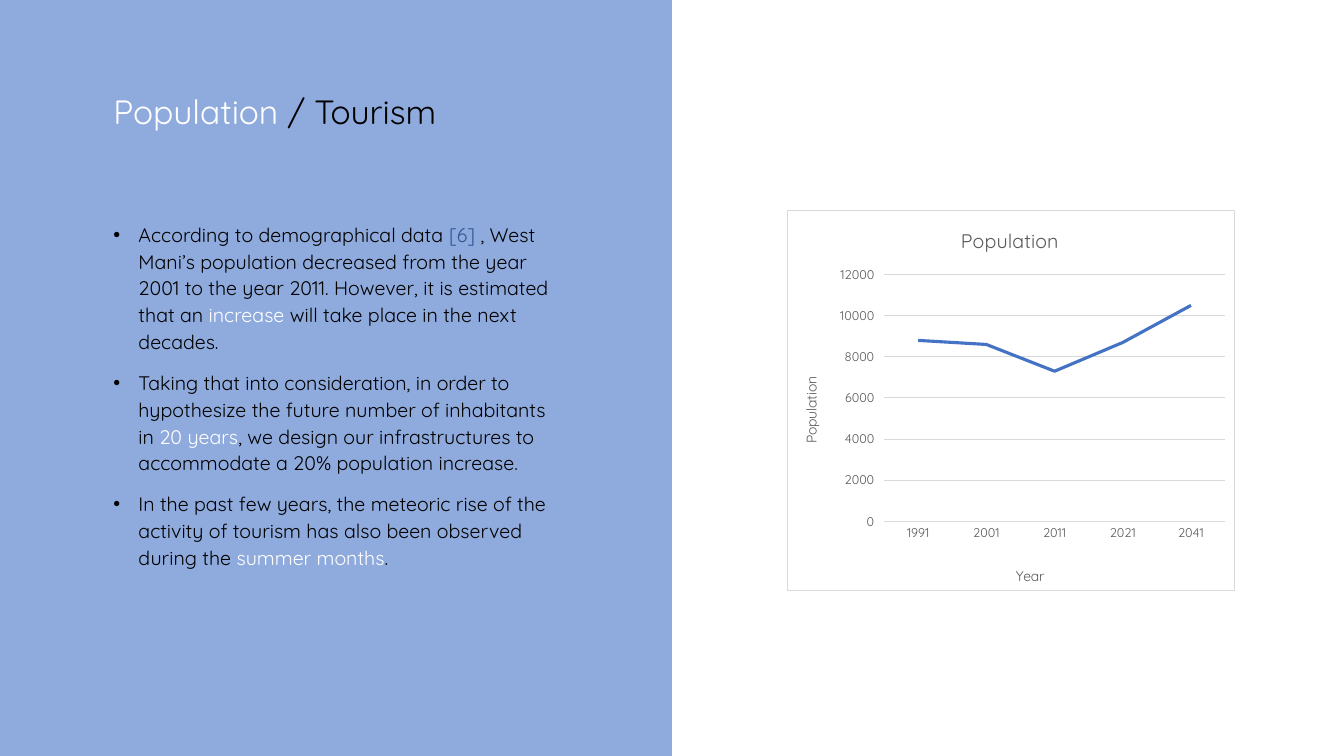
import dataclasses

import lxml.etree
import pptx
import pptx.chart.data
import pptx.dml.color
import pptx.enum.chart
import pptx.enum.shapes
import pptx.enum.text
import pptx.oxml
import pptx.oxml.ns
import pptx.util

Pt = pptx.util.Pt
qn = pptx.oxml.ns.qn


@dataclasses.dataclass(frozen=True)
class Theme:
    font: str = "Quicksand"
    panel: str = "8FAADC"
    ink: str = "000000"
    highlight: str = "FFFFFF"
    citation: str = "2F5597"
    series: str = "4472C4"
    chart_text: str = "595959"
    rule: str = "D9D9D9"
    heading_size: float = 24
    body_size: float = 14
    chart_title_size: float = 14
    axis_title_size: float = 10
    tick_size: float = 9


THEME = Theme()

BULLETS = [
    [("According to demographical data ", THEME.ink), ("[6] ", THEME.citation),
     (", West Mani’s population decreased from the year 2001 to the year 2011. "
      "However, it is estimated that an ", THEME.ink),
     ("increase", THEME.highlight), (" will take place in the next decades.", THEME.ink)],
    [("Taking that into consideration, in order to hypothesize the future number of "
      "inhabitants in ", THEME.ink), ("20 years", THEME.highlight),
     (", we design our infrastructures to accommodate a 20% population increase.", THEME.ink)],
    [("In the past few years, the meteoric rise of the activity of tourism has also been "
      "observed during the ", THEME.ink), ("summer months", THEME.highlight),
     (".", THEME.ink)],
]
POPULATION = {"1991": 8800, "2001": 8600, "2011": 7300, "2021": 8700, "2041": 10500}


def rgb(value):
    return pptx.dml.color.RGBColor.from_string(value)


def set_font(font, size, color):
    font.name, font.size, font.bold = THEME.font, Pt(size), False
    font.color.rgb = rgb(color)


def add_text(paragraph, text, *, size, color):
    run = paragraph.add_run()
    run.text = text
    set_font(run.font, size, color)


def add_panel(slide, left, top, width, height):
    panel = slide.shapes.add_shape(pptx.enum.shapes.MSO_SHAPE.RECTANGLE,
                                   Pt(left), Pt(top), Pt(width), Pt(height))
    panel.shadow.inherit = False
    panel.fill.solid()
    panel.fill.fore_color.rgb = rgb(THEME.panel)
    panel.line.fill.background()
    # The panel lies behind the heading placeholder
    slide.shapes.title._element.addprevious(panel._element)


def set_heading(slide, runs, left, top, width, height):
    heading = slide.shapes.title
    heading.left, heading.top, heading.width, heading.height = map(
        Pt, (left, top, width, height))
    heading.text_frame.vertical_anchor = pptx.enum.text.MSO_ANCHOR.MIDDLE
    line = heading.text_frame.paragraphs[0]
    line.alignment = pptx.enum.text.PP_ALIGN.LEFT
    line.line_spacing = 0.9
    for text, color in runs:
        add_text(line, text, size=THEME.heading_size, color=color)


def add_bullets(slide, bullets, left, top, width, height):
    frame = slide.shapes.add_textbox(Pt(left), Pt(top), Pt(width), Pt(height)).text_frame
    frame.word_wrap = True
    for index, runs in enumerate(bullets):
        bullet = frame.add_paragraph() if index else frame.paragraphs[0]
        properties = bullet._p.get_or_add_pPr()
        properties.set("marL", str(Pt(18)))
        properties.set("indent", str(Pt(-18)))
        lxml.etree.SubElement(properties, qn("a:buFont")).set("typeface", "Arial")
        lxml.etree.SubElement(properties, qn("a:buChar")).set("char", "•")
        bullet.line_spacing = 1.14
        if index:
            bullet.space_before = Pt(10)
        for text, color in runs:
            add_text(bullet, text, size=THEME.body_size, color=color)


def set_layout(element, x, y, width=None, height=None):
    """Place a chart part by fractions of the chart area."""
    for old in element.findall(qn("c:layout")):
        element.remove(old)
    layout = pptx.oxml.parse_xml(
        f'<c:layout {pptx.oxml.ns.nsdecls("c")}><c:manualLayout/></c:layout>')
    manual = layout[0]
    settings = {"xMode": "edge", "yMode": "edge", "x": x, "y": y, "w": width, "h": height}
    if width:
        settings = {"layoutTarget": "inner", **settings}
    for name, value in settings.items():
        if value is not None:
            lxml.etree.SubElement(manual, qn(f"c:{name}")).set("val", str(value))
    text = element.find(qn("c:tx"))
    element.insert(0 if text is None else 1, layout)


def set_chart_title(title, text, size, x, y):
    add_text(title.text_frame.paragraphs[0], text, size=size, color=THEME.chart_text)
    set_layout(title._element, x, y)


def add_border(chart):
    border = pptx.oxml.parse_xml(
        f'<c:spPr {pptx.oxml.ns.nsdecls("c", "a")}><a:noFill/><a:ln w="{Pt(0.75)}">'
        f'<a:solidFill><a:srgbClr val="{THEME.rule}"/></a:solidFill></a:ln></c:spPr>')
    chart._chartSpace.find(qn("c:chart")).addnext(border)


def add_population_chart(slide, left, top, width, height):
    data = pptx.chart.data.CategoryChartData()
    data.categories = list(POPULATION)
    data.add_series("Series 1", list(POPULATION.values()))
    chart = slide.shapes.add_chart(pptx.enum.chart.XL_CHART_TYPE.LINE, Pt(left), Pt(top),
                                   Pt(width), Pt(height), data).chart
    set_font(chart.font, THEME.tick_size, THEME.chart_text)
    add_border(chart)
    chart.has_legend = False
    chart.has_title = True
    set_chart_title(chart.chart_title, "Population", THEME.chart_title_size, 0.38, 0.03)
    set_layout(chart._chartSpace.chart.plotArea, 0.216, 0.168, 0.763, 0.65)

    # Series
    chart.plots[0].vary_by_categories = False
    population = chart.plots[0].series[0]
    population.smooth = False
    population.marker.style = pptx.enum.chart.XL_MARKER_STYLE.NONE
    population.format.line.color.rgb = rgb(THEME.series)
    population.format.line.width = Pt(2.25)

    # Axes
    years, people = chart.category_axis, chart.value_axis
    for axis, text, x, y in ((years, "Year", 0.505, 0.93), (people, "Population", 0.025, 0.43)):
        axis.has_title = True
        set_chart_title(axis.axis_title, text, THEME.axis_title_size, x, y)
        set_font(axis.tick_labels.font, THEME.tick_size, THEME.chart_text)
    years.major_tick_mark = pptx.enum.chart.XL_TICK_MARK.NONE
    people.minimum_scale, people.maximum_scale, people.major_unit = 0, 12000, 2000
    people.format.line.fill.background()
    for line in (years.format.line, people.major_gridlines.format.line):
        line.color.rgb = rgb(THEME.rule)
        line.width = Pt(0.75)


def main():
    deck = pptx.Presentation()
    deck.slide_width, deck.slide_height = Pt(960), Pt(540)
    slide = deck.slides.add_slide(deck.slide_layouts[5])
    add_panel(slide, 0, 0, 480, 540)
    set_heading(slide, [("Population", THEME.highlight), (" / Tourism", THEME.ink)],
                73.8, 28.8, 828, 104.4)
    add_bullets(slide, BULLETS, 73.8, 153.2, 332.6, 260)
    add_population_chart(slide, 562.2, 150.2, 320, 272)
    deck.save("out.pptx")


if __name__ == "__main__":
    main()
